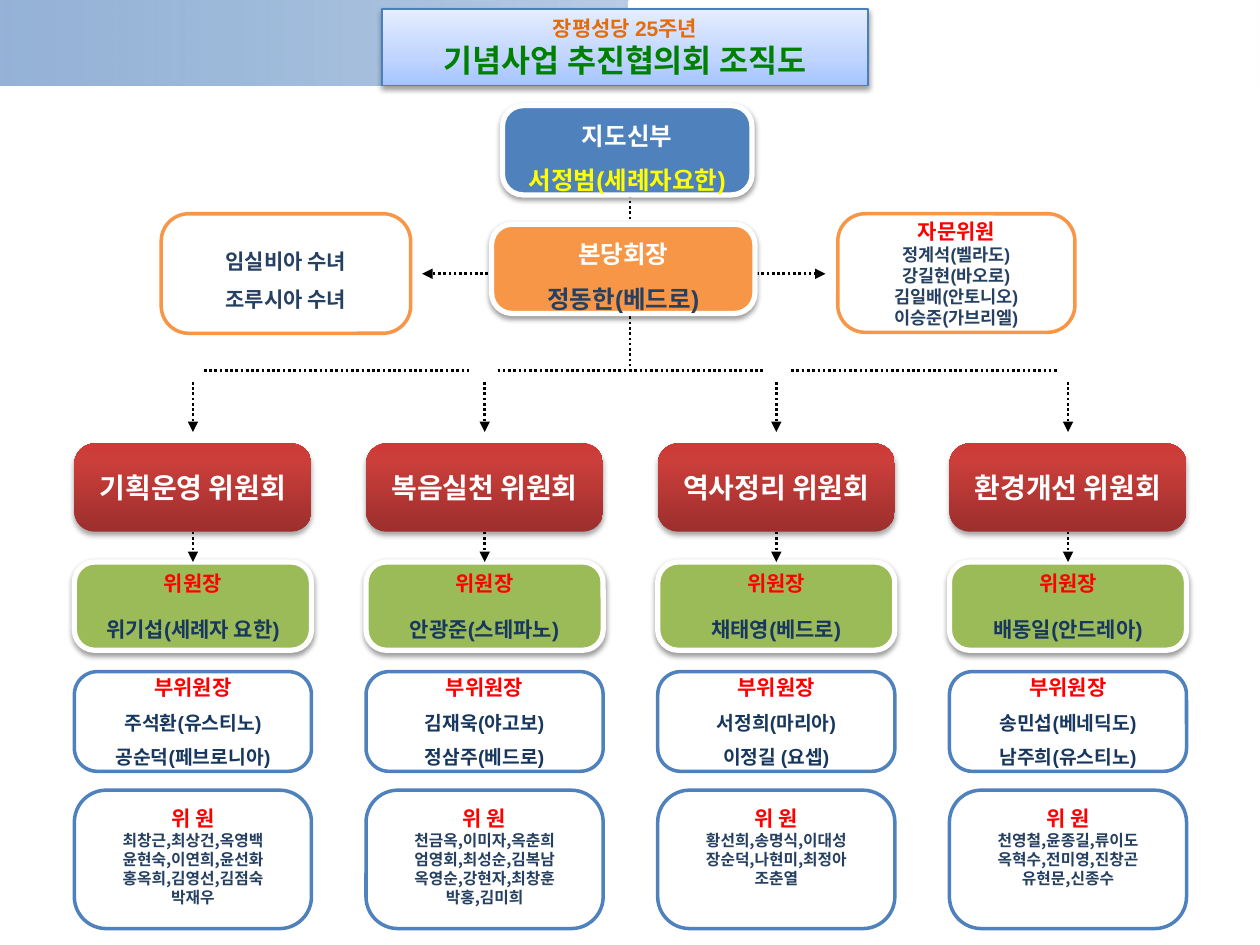
from lxml.etree import SubElement
from pptx import Presentation
from pptx.dml.color import RGBColor
from pptx.enum.dml import MSO_LINE
from pptx.enum.shapes import MSO_CONNECTOR, MSO_SHAPE
from pptx.enum.text import MSO_ANCHOR, PP_ALIGN
from pptx.oxml.ns import qn
from pptx.util import Cm, Pt

RED, NAVY, SLATE, WHITE = "FF0000", "17375E", "254061", "FFFFFF"
BLUE, ORANGE, GREEN = "4F81BD", "F79646", "9BBB59"
KOREAN = "Noto Sans CJK KR"
CARD_SHADOW, COMMITTEE_SHADOW = (38, 1.6), (35, 1.8)

COMMITTEES = [
    ("기획운영 위원회", "위기섭(세례자 요한)",
     ["주석환(유스티노)", "공순덕(페브로니아)"],
     ["최창근,최상건,옥영백", "윤현숙,이연희,윤선화", "홍옥희,김영선,김점숙", "박재우"]),
    ("복음실천 위원회", "안광준(스테파노)",
     ["김재욱(야고보)", "정삼주(베드로)"],
     ["천금옥,이미자,옥춘희", "엄영회,최성순,김복남", "옥영순,강현자,최창훈", "박홍,김미희"]),
    ("역사정리 위원회", "채태영(베드로)",
     ["서정희(마리아)", "이정길 (요셉)"],
     ["황선희,송명식,이대성", "장순덕,나현미,최정아", "조춘열"]),
    ("환경개선 위원회", "배동일(안드레아)",
     ["송민섭(베네딕도)", "남주희(유스티노)"],
     ["천영철,윤종길,류이도", "옥혁수,전미영,진창곤", "유현문,신종수"]),
]


def rgb(color):
    return RGBColor.from_string(color)


def add_color(parent, color, opacity=100):
    clr = SubElement(parent, qn("a:srgbClr"), val=color)
    if opacity < 100:
        SubElement(clr, qn("a:alpha"), val=str(opacity * 1000))


def fill_gradient(shape, stops, angle):
    """Fill with (position, colour, opacity) stops; the angle runs counter-clockwise."""
    shape.fill.gradient()
    shape.fill.gradient_angle = angle
    stop_list = shape._element.spPr.find(qn("a:gradFill")).find(qn("a:gsLst"))
    for stop in list(stop_list):
        stop_list.remove(stop)
    for position, color, opacity in stops:
        stop = SubElement(stop_list, qn("a:gs"), pos=str(position * 1000))
        add_color(stop, color, opacity)


def add_drop_shadow(shape, opacity, distance):
    effects = shape._element.spPr.find(qn("a:effectLst"))
    shadow = SubElement(effects, qn("a:outerShdw"), blurRad=str(Pt(3.1)),
                        dist=str(Pt(distance)), dir="5400000", rotWithShape="0")
    add_color(shadow, "000000", opacity)


def add_box(slide, box, fill, line=None, width=2, shadow=None, kind=MSO_SHAPE.ROUNDED_RECTANGLE):
    """Place a shape; fill is a colour, or a list of stops for an upward gradient."""
    shape = slide.shapes.add_shape(kind, *(Cm(length) for length in box))
    if kind == MSO_SHAPE.ROUNDED_RECTANGLE:
        shape.adjustments[0] = 0.23
    if isinstance(fill, str):
        shape.fill.solid()
        shape.fill.fore_color.rgb = rgb(fill)
    else:
        fill_gradient(shape, fill, 90)
    if line:
        shape.line.color.rgb = rgb(line)
        shape.line.width = Pt(width)
    else:
        shape.line.fill.background()
    shape.shadow.inherit = False
    if shadow:
        add_drop_shadow(shape, *shadow)
    return shape


def write(shape, lines, spacing=None, anchor=MSO_ANCHOR.MIDDLE, font="Arial", wrap=False):
    """Write centred bold lines, each given as (text, size, colour)."""
    frame = shape.text_frame
    frame.word_wrap = wrap
    frame.vertical_anchor = anchor
    frame.text = "\n".join(text for text, _, _ in lines)
    for paragraph, (_, size, color) in zip(frame.paragraphs, lines):
        paragraph.alignment = PP_ALIGN.CENTER
        if spacing:
            paragraph.line_spacing = spacing
        for run in paragraph.runs:
            run.font.name = font
            run.font.size = Pt(size)
            run.font.bold = True
            run.font.color.rgb = rgb(color)
            SubElement(run._r.get_or_add_rPr(), qn("a:ea"), typeface=KOREAN)
    return frame.paragraphs


def add_dotted_line(slide, start, end, arrow=False):
    line = slide.shapes.add_connector(
        MSO_CONNECTOR.STRAIGHT, *(Cm(length) for length in (*start, *end)))
    line.line.color.rgb = rgb("000000")
    line.line.width = Pt(1.5)
    line.line.dash_style = MSO_LINE.ROUND_DOT
    if arrow:
        SubElement(line.line._get_or_add_ln(), qn("a:tailEnd"), type="triangle")
    SubElement(line._element.spPr, qn("a:effectLst"))
    return line


def add_backdrop(slide, width, height):
    strip = add_box(slide, (0, 0, width, 1.73), WHITE, kind=MSO_SHAPE.RECTANGLE)
    fill_gradient(strip, [(0, BLUE, 60), (100, WHITE, 100)], 0)
    add_box(slide, (width / 2, 0.03, 12.6, height - 0.33), WHITE, WHITE,
            kind=MSO_SHAPE.RECTANGLE)


def add_title(slide, box):
    stops = [(0, "A4C4FF", 100), (35, "BFD4FF", 100), (100, "E6EEFF", 100)]
    banner = add_box(slide, box, stops, "4B7EBC", 0.75, CARD_SHADOW, MSO_SHAPE.RECTANGLE)
    write(banner, [("장평성당 25주년", 12, "E46C0A"),
                   ("기념사업 추진협의회 조직도", 18, "008000")], wrap=True)


def add_leadership(slide, left, top):
    """Priest and president in the middle, sisters to the left, advisers to the right."""
    trunk, side = left + 9.45, top + 3.39
    add_dotted_line(slide, (trunk, top + 1.6), (trunk, top + 5.34))
    add_dotted_line(slide, (trunk, side), (left + 5.26, side), arrow=True)
    add_dotted_line(slide, (trunk, side), (left + 13.39, side), arrow=True)

    priest = add_box(slide, (left + 6.88, top, 5.03, 1.8), BLUE, WHITE, 3, CARD_SHADOW)
    write(priest, [("지도신부", 14, WHITE), ("서정범(세례자요한)", 14, "FFFF00")], 1.5)
    president = add_box(slide, (left + 6.66, top + 2.39, 5.31, 1.8), ORANGE, WHITE, 3, CARD_SHADOW)
    write(president, [("본당회장", 14, WHITE), ("정동한(베드로)", 14, SLATE)], 1.5)
    sisters = add_box(slide, (left, top + 2.18, 5.03, 2.41), WHITE, ORANGE)
    write(sisters, [("임실비아 수녀", 12, SLATE), ("조루시아 수녀", 12, SLATE)], 1.5, font=KOREAN)
    advisers = add_box(slide, (left + 13.64, top + 2.18, 4.78, 2.39), WHITE, ORANGE)
    names = ["정계석(벨라도)", "강길현(바오로)", "김일배(안토니오)", "이승준(가브리엘)"]
    write(advisers, [("자문위원", 12, RED)] + [(name, 10, SLATE) for name in names])


def add_branch_line(slide, left, top):
    """Three dashes that stand at equal steps."""
    for index in range(3):
        start = left + index * 5.92
        add_dotted_line(slide, (start, top), (start + 5.35, top))


def add_committee(slide, left, top, width, committee):
    name, chair_name, deputy_names, member_names = committee
    middle = left + width / 2
    add_dotted_line(slide, (middle, top - 1.24), (middle, top - 0.23), arrow=True)

    stops = [(0, "9C2F2D", 100), (80, "CB3E3A", 100), (100, "CE3B37", 100)]
    heading = add_box(slide, (left, top, width, 1.78), stops, shadow=COMMITTEE_SHADOW)
    write(heading, [(name, 16, WHITE)])

    chair = add_box(slide, (left, top + 2.39, width, 1.78), GREEN, WHITE, 3, CARD_SHADOW)
    chair_lines = write(chair, [("위원장", 12, RED), (chair_name, 12, NAVY)])
    chair_lines[1].space_before = Pt(12)
    link = add_dotted_line(slide, (middle, top + 1.78), (middle, top + 2.39), arrow=True)
    link.begin_connect(heading, 2)
    link.end_connect(chair, 0)

    deputies = add_box(slide, (left, top + 4.6, width, 2.01), WHITE, BLUE)
    deputy_lines = write(deputies, [("부위원장", 12, RED)] + [(n, 11, NAVY) for n in deputy_names])
    for line in deputy_lines[1:]:
        line.line_spacing = 1.5

    members = add_box(slide, (left, top + 6.99, width, 2.79), WHITE, BLUE)
    write(members, [("위 원", 12, RED)] + [(n, 9, SLATE) for n in member_names],
          anchor=MSO_ANCHOR.TOP, font=KOREAN)


def main():
    width, height = 25.4, 19.05
    presentation = Presentation()
    presentation.slide_width, presentation.slide_height = Cm(width), Cm(height)
    slide = presentation.slides.add_slide(presentation.slide_layouts[6])
    add_backdrop(slide, width, height)
    add_leadership(slide, 3.25, 2.13)
    add_branch_line(slide, 4.11, 7.47)
    for index, committee in enumerate(COMMITTEES):
        add_committee(slide, 1.5 + index * 5.88, 8.94, 4.78, committee)
    add_title(slide, (7.7, 0.18, 9.8, 1.55))
    presentation.save("out.pptx")


if __name__ == "__main__":
    main()
